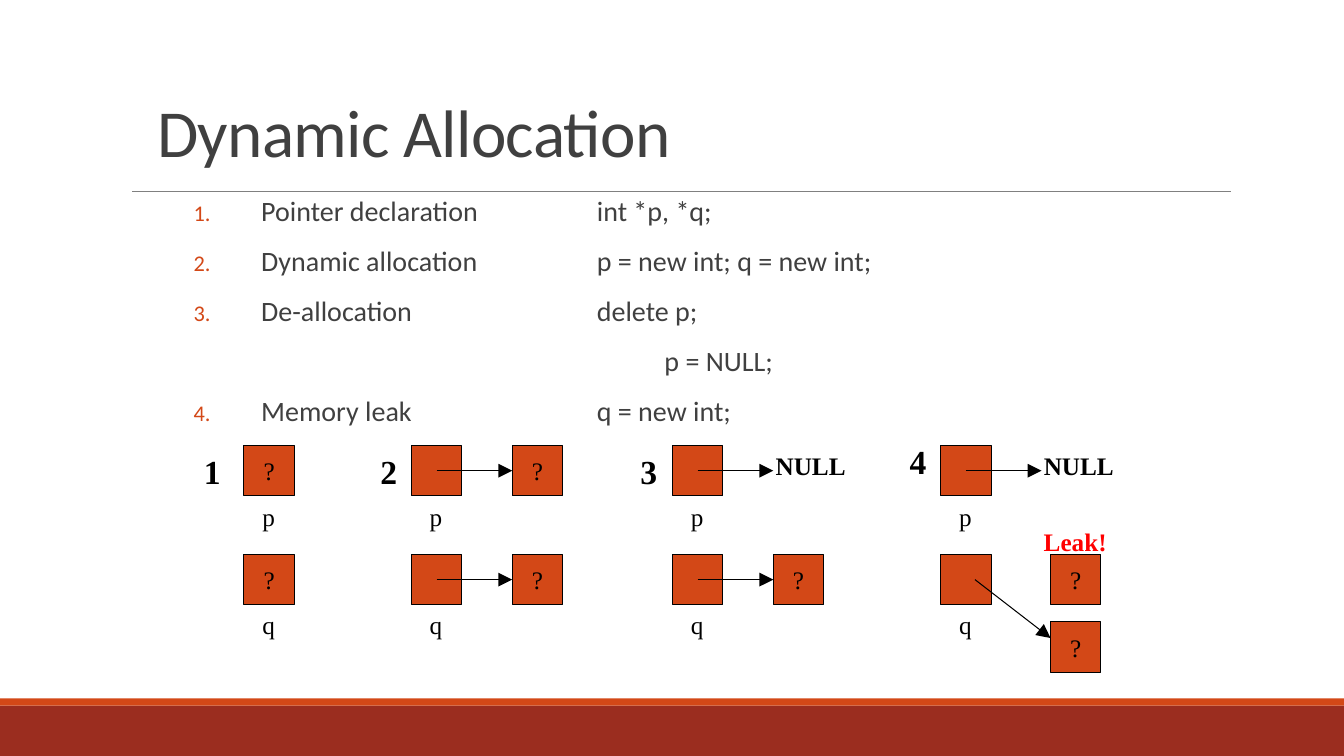
from lxml.etree import SubElement
from pptx import Presentation
from pptx.dml.color import RGBColor
from pptx.enum.shapes import MSO_CONNECTOR as Connector, MSO_SHAPE as Shape
from pptx.enum.text import MSO_ANCHOR as Anchor, MSO_AUTO_SIZE as AutoSize, PP_ALIGN as Align
from pptx.oxml.ns import qn
from pptx.util import Inches, Pt

ORANGE, BRICK, GRAY, INK, BLACK, RED = "D34817", "9B2D1F", "808080", "404040", "000000", "FF0000"
SANS, SERIF = "Calibri", "Times New Roman"
CELL, ROW_STEP = 0.5, 1.08

STEPS = [
    ("Pointer declaration\t\tint *p, *q;", 1),
    ("Dynamic allocation\t\tp = new int; q = new int;", 1),
    ("De-allocation\t\tdelete p;", 1),
    ("\t\t\t\t\tp = NULL;", None),
    ("Memory leak\t\tq = new int;", 4),
]


def color(hex_text):
    return RGBColor.from_string(hex_text)


def style(paragraph, size, font, ink, bold=False):
    for run in paragraph.runs:
        run.font.size = Pt(size)
        run.font.name = font
        run.font.bold = bold
        run.font.color.rgb = color(ink)


def place(item, left, top, width, height):
    item.left, item.top = Inches(left), Inches(top)
    item.width, item.height = Inches(width), Inches(height)


def add_rect(slide, left, top, width, height, fill, outline=None):
    rect = slide.shapes.add_shape(
        Shape.RECTANGLE, Inches(left), Inches(top), Inches(width), Inches(height))
    rect.shadow.inherit = False
    rect.fill.solid()
    rect.fill.fore_color.rgb = color(fill)
    if outline:
        rect.line.color.rgb = color(outline)
        rect.line.width = Pt(0.75)
    else:
        rect.line.fill.background()
    return rect


def add_cell(slide, left, top, value=""):
    cell = add_rect(slide, left, top, CELL, CELL, ORANGE, BLACK)
    if value:
        frame = cell.text_frame
        frame.text = value
        frame.word_wrap = False
        frame.vertical_anchor = Anchor.MIDDLE
        frame.paragraphs[0].alignment = Align.CENTER
        style(frame.paragraphs[0], 18, SERIF, BLACK)


def add_label(slide, left, top, width, text, size=18, bold=True, ink=BLACK):
    label = slide.shapes.add_textbox(
        Inches(left), Inches(top), Inches(width), Inches(0.5 if size > 18 else 0.4))
    frame = label.text_frame
    frame.text = text
    frame.word_wrap = False
    frame.auto_size = AutoSize.SHAPE_TO_FIT_TEXT
    frame.paragraphs[0].alignment = Align.CENTER
    style(frame.paragraphs[0], size, SERIF, ink, bold)


def add_line(slide, x1, y1, x2, y2, ink, width, arrow=False):
    line = slide.shapes.add_connector(
        Connector.STRAIGHT, Inches(x1), Inches(y1), Inches(x2), Inches(y2))
    line.line.color.rgb = color(ink)
    line.line.width = Pt(width)
    if arrow:
        SubElement(line.line._get_or_add_ln(), qn("a:tailEnd"), type="triangle", w="lg", len="lg")
    SubElement(line._element.spPr, qn("a:effectLst"))


def add_frame(slide):
    add_rect(slide, 0, 7, 13.33, 0.5, BRICK)
    add_rect(slide, 0, 6.93, 13.33, 0.07, ORANGE)
    add_line(slide, 1.31, 1.9, 12.21, 1.9, GRAY, 0.5)


def add_title(slide, left, top, width, height):
    title = slide.shapes.title
    place(title, left, top, width, height)
    frame = title.text_frame
    frame.text = "Dynamic Allocation"
    frame.auto_size = AutoSize.NONE
    frame.vertical_anchor = Anchor.BOTTOM
    heading = frame.paragraphs[0]
    heading.alignment = Align.LEFT
    heading.line_spacing = 0.85
    style(heading, 48, SANS, INK)
    heading.runs[0].font._element.set("spc", "-50")


def number_step(paragraph, start):
    props = paragraph._p.get_or_add_pPr()
    props.set("marL", str(Inches(0.67)))
    props.set("indent", str(-Inches(0.67)))
    props.set("defTabSz", str(Inches(1)))
    if start is None:
        SubElement(props, qn("a:buNone"))
        return
    SubElement(SubElement(props, qn("a:buClr")), qn("a:srgbClr"), val=ORANGE)
    SubElement(props, qn("a:buSzPct"), val="80000")
    SubElement(props, qn("a:buFont"), typeface=SANS)
    numbering = SubElement(props, qn("a:buAutoNum"), type="arabicPeriod")
    if start > 1:
        numbering.set("startAt", str(start))


def add_steps(slide, left, top, width, height):
    body = slide.placeholders[1]
    place(body, left, top, width, height)
    frame = body.text_frame
    frame.text = "\n".join(text for text, _ in STEPS)
    frame.auto_size = AutoSize.NONE
    frame.vertical_anchor = Anchor.TOP
    frame.margin_left = frame.margin_right = 0
    for paragraph, (_, start) in zip(frame.paragraphs, STEPS):
        paragraph.line_spacing = 0.9
        paragraph.space_before, paragraph.space_after = Pt(12), Pt(2)
        number_step(paragraph, start)
        style(paragraph, 20, SANS, INK)


def add_pointers(slide, left, top, number, number_left, number_top, value=""):
    add_label(slide, number_left, number_top, 0.37, number, 24)
    for row, name in enumerate("pq"):
        row_top = top + row * ROW_STEP
        add_cell(slide, left, row_top, value)
        add_label(slide, left + 0.08, row_top + CELL, 0.33, name, bold=False)


def add_target(slide, left, top, target):
    middle = top + CELL / 2
    if target == "NULL":
        add_label(slide, left + 0.92, top, 0.9, target)
    else:
        add_cell(slide, left + 1, top, target)
    add_line(slide, left + 0.25, middle, left + 1, middle, BLACK, 0.75, True)


def add_leak(slide, left, top):
    lost_left, lost_top = left + 1.09, top + ROW_STEP
    add_cell(slide, lost_left, lost_top, "?")
    add_cell(slide, lost_left, lost_top + 0.67, "?")
    add_line(slide, left + 0.34, lost_top + 0.25, lost_left, lost_top + 0.83, BLACK, 0.75, True)
    add_label(slide, left + 0.92, top + 0.75, 0.83, "Leak!", ink=RED)


def add_memory(slide, top):
    declared, allocated, freed, leaked = 2.42, 4.08, 6.67, 9.33
    add_pointers(slide, declared, top, "1", 1.92, top, "?")
    add_pointers(slide, allocated, top, "2", 3.67, top)
    add_pointers(slide, freed, top, "3", 6.25, top)
    add_pointers(slide, leaked, top, "4", 8.92, top - 0.09)
    add_target(slide, allocated, top, "?")
    add_target(slide, allocated, top + ROW_STEP, "?")
    add_target(slide, freed, top, "NULL")
    add_target(slide, freed, top + ROW_STEP, "?")
    add_target(slide, leaked, top, "NULL")
    add_leak(slide, leaked, top)


def main():
    deck = Presentation()
    deck.slide_width, deck.slide_height = Inches(13.33), Inches(7.5)
    slide = deck.slides.add_slide(deck.slide_layouts[1])
    add_frame(slide)
    add_title(slide, 1.46, 0.5, 8.5, 1.25)
    add_steps(slide, 1.92, 1.91, 9.58, 2.67)
    add_memory(slide, 4.42)
    deck.save("out.pptx")


if __name__ == "__main__":
    main()
